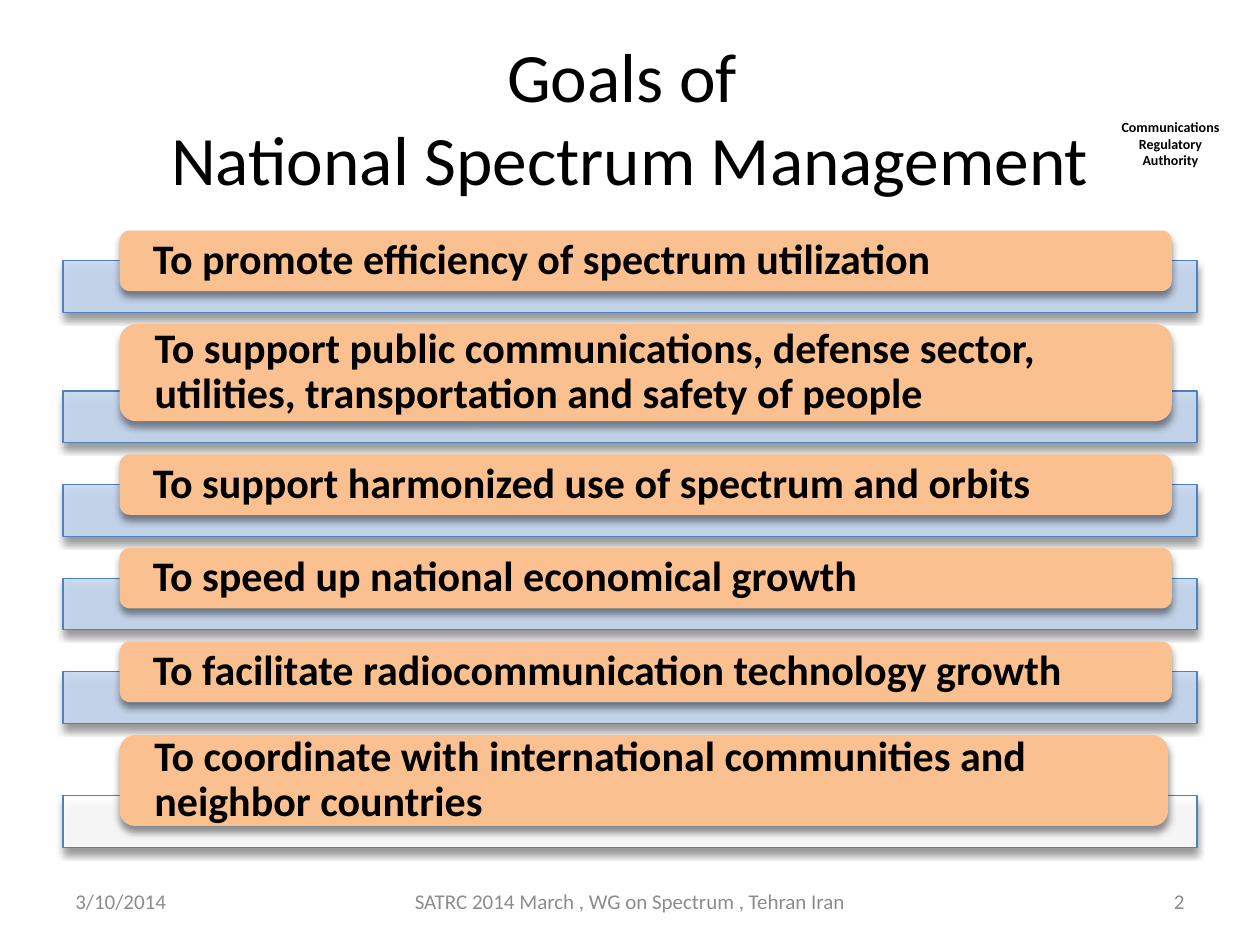
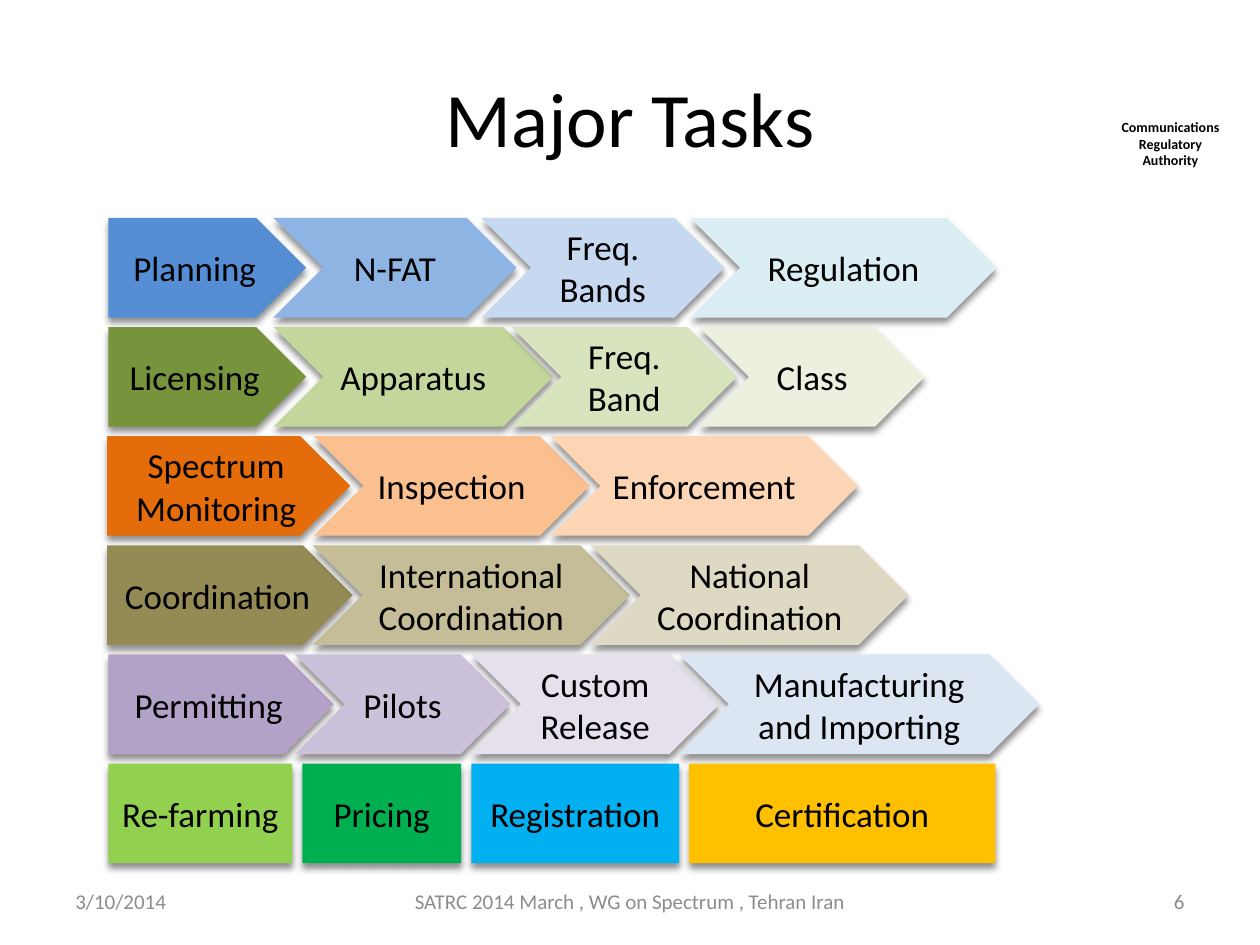
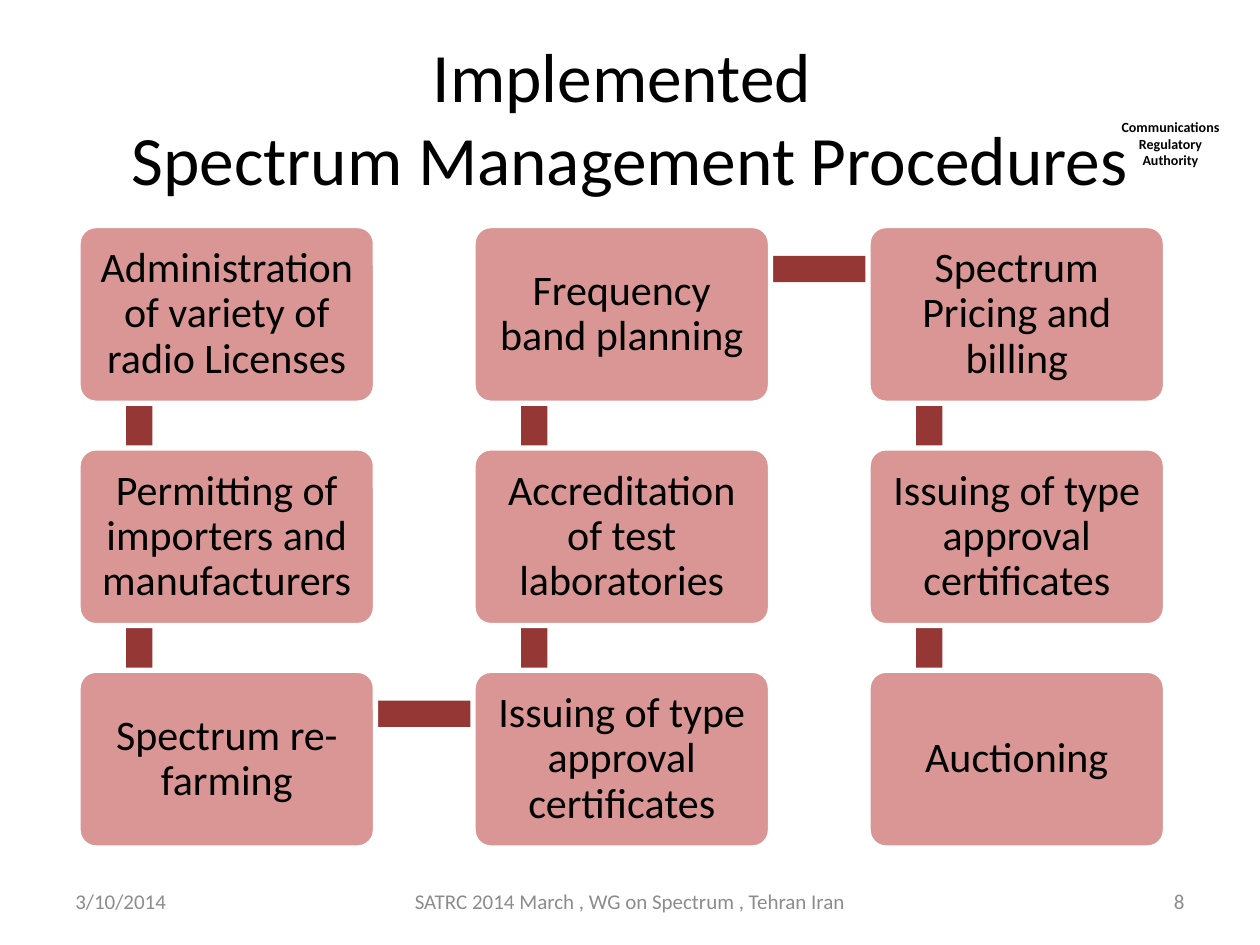
from dataclasses import dataclass

from lxml import etree
from pptx import Presentation
from pptx import util as u
from pptx.dml.color import RGBColor
from pptx.enum import shapes, text
from pptx.oxml.ns import qn

KIND = shapes.MSO_SHAPE
ALIGN = text.PP_ALIGN
MID, TOP = text.MSO_ANCHOR.MIDDLE, text.MSO_ANCHOR.TOP
CELL = u.Inches(0.1)  # the slide is a grid of 100 columns by 75 rows


@dataclass(frozen=True)
class Theme:
    ink: str = "000000"
    paper: str = "FFFFFF"
    muted: str = "8C8C8C"
    bar: str = "C6D9F1"
    edge: str = "4F81BD"
    tab: str = "FAC090"
    card: str = "D99694"
    link: str = "953735"
    font: str = "Calibri"
    title: float = 44
    pair: float = 39.6  # title on two lines
    body: float = 24
    task: float = 20
    foot: float = 12
    mark: float = 8


T = Theme()


@dataclass(frozen=True)
class Box:
    """A region in grid cells."""
    x: float
    y: float
    w: float
    h: float

    def sub(self, x, y, w, h):
        return Box(self.x + x, self.y + y, w, h)

    def emu(self):
        return [round(v * CELL) for v in (self.x, self.y, self.w, self.h)]


PAGE = Box(0, 0, 100, 75)


def rgb(code):
    return RGBColor.from_string(code)


def write(shape, words, size, color=T.ink, bold=False, align=ALIGN.CENTER,
          anchor=MID, pad=(1, 0.5), space=1.0):
    frame = shape.text_frame
    side, edge = (round(v * CELL) for v in pad)
    look = dict(word_wrap=True, vertical_anchor=anchor, margin_left=side,
                margin_right=side, margin_top=edge, margin_bottom=edge)
    for key, val in look.items():
        setattr(frame, key, val)
    frame.text = words
    para = frame.paragraphs[0]
    para.alignment, para.line_spacing = align, space
    for run in para.runs:
        face = dict(name=T.font, size=u.Pt(size), bold=bold)
        for key, val in face.items():
            setattr(run.font, key, val)
        run.font.color.rgb = rgb(color)


def label(slide, box, words, size, **form):
    write(slide.shapes.add_textbox(*box.emu()), words, size, **form)


def shade(shape):
    """Give the shape a soft shadow straight below."""
    glow = shape._element.spPr.find(qn("a:effectLst"))
    drop = etree.SubElement(glow, qn("a:outerShdw"), blurRad=str(u.Pt(4)),
                            dist=str(u.Pt(3)), dir="5400000",
                            algn="t", rotWithShape="0")
    tint = etree.SubElement(drop, qn("a:srgbClr"), val="000000")
    etree.SubElement(tint, qn("a:alpha"), val="43000")


def block(slide, kind, box, fill, line=None, width=0.75, shadow=False,
          bend=None, alpha=None):
    shape = slide.shapes.add_shape(kind, *box.emu())
    shape.shadow.inherit = False
    shape.fill.solid()
    shape.fill.fore_color.rgb = rgb(fill)
    if alpha:
        tint = shape._element.spPr.find(qn("a:solidFill"))[0]
        etree.SubElement(tint, qn("a:alpha"), val=str(alpha * 1000))
    if line:
        shape.line.color.rgb = rgb(line)
        shape.line.width = u.Pt(width)
    else:
        shape.line.fill.background()
    if shadow:
        shade(shape)
    if bend is not None:
        shape.adjustments[0] = bend
    return shape


def frame(deck, title, size, page):
    """Add a slide with the title, agency name and footer."""
    slide = deck.slides.add_slide(deck.slide_layouts[6])
    label(slide, PAGE.sub(87.8, 8.9, 10.2, 5),
          "Communications Regulatory Authority", T.mark, bold=True, anchor=TOP)
    label(slide, PAGE.sub(5, 3, 90, 12.5), title, size)
    for x, w, words, align in (
            (5, 23.3, "3/10/2014", ALIGN.LEFT),
            (31.1, 37.8, "SATRC 2014 March , WG on Spectrum , Tehran Iran",
             ALIGN.CENTER),
            (71.7, 23.3, page, ALIGN.RIGHT)):
        label(slide, PAGE.sub(x, 69.5, w, 4), words, T.foot,
              color=T.muted, align=align)
    return slide


GOALS = (  # tab height, tab width, bar colour, words
    (4.8, 83.5, T.bar, "To promote efficiency of spectrum utilization"),
    (7.7, 83.5, T.bar, "To support public communications, defense sector, "
                       "utilities, transportation and safety of people"),
    (4.8, 83.5, T.bar, "To support harmonized use of spectrum and orbits"),
    (4.8, 83.5, T.bar, "To speed up national economical growth"),
    (4.8, 83.5, T.bar, "To facilitate radiocommunication technology growth"),
    (7.2, 83.2, T.paper, "To coordinate with international communities and "
                         "neighbor countries"),
)


def goals(slide, box):
    """Stack tabs, each over the upper part of its bar."""
    top, bar, over, gap = 0, 4.1, 2.4, 0.93
    for high, wide, fill, words in GOALS:
        base = top + high - over
        block(slide, KIND.RECTANGLE, box.sub(0, base, box.w, bar), fill,
              line=T.edge, shadow=True, alpha=90)
        tab = block(slide, KIND.ROUNDED_RECTANGLE,
                    box.sub(4.5, top, wide, high), T.tab, shadow=True)
        write(tab, words, T.body, bold=True, align=ALIGN.LEFT,
              pad=(2.4, 0), space=0.9)
        top = base + bar + gap


TASKS = (  # each piece: overlap with the one before, width, colour, words
    ((0, 15.7, "558ED5", "Planning"), (2.6, 19.3, "8EB4E3", "N-FAT"),
     (2.8, 19.3, "C6D9F1", "Freq. Bands"), (2.7, 24.3, "DBEEF4", "Regulation")),
    ((0, 15.7, "77933C", "Licensing"), (2.6, 22.2, "C3D69B", "Apparatus"),
     (3.3, 17.9, "D7E4BD", "Freq. Band"), (3, 17.9, "EBF1DE", "Class")),
    ((0.1, 19.3, "E46C0A", "Spectrum Monitoring"),
     (2.9, 21.9, "FAC090", "Inspection"), (3.1, 24.4, "FCD5B5", "Enforcement")),
    ((0.1, 19.5, "948A54", "Coordination"),
     (3.2, 25.2, "C4BD97", "International Coordination"),
     (3.1, 25.2, "DDD9C3", "National Coordination")),
    ((0, 17.9, "B3A2C7", "Permitting"), (3.1, 17.1, "CCC1DA", "Pilots"),
     (3.1, 19.7, "E6E0EC", "Custom Release"),
     (3.2, 28.6, "DCE6F2", "Manufacturing and Importing")),
    ((0, 14.6, "92D050", "Re-farming"), (-0.8, 12.6, "00B050", "Pricing"),
     (-0.8, 16.5, "00B0F0", "Registration"),
     (-0.8, 24.3, "FFC000", "Certification")),
)


def tasks(slide, box):
    """Lay one chain of arrows in each row; the last row is square-ended."""
    high = 7.9
    step = (box.h - high) / (len(TASKS) - 1)
    for row, chain in enumerate(TASKS):
        left = 0
        bend = 0 if row == len(TASKS) - 1 else None
        for col, (lap, wide, fill, words) in enumerate(chain):
            left -= lap
            kind = KIND.CHEVRON if col else KIND.PENTAGON
            piece = block(slide, kind, box.sub(left, row * step, wide, high),
                          fill, shadow=True, bend=bend)
            write(piece, words, T.task)
            left += wide


STEPS = (  # one column each, top to bottom
    ("Administration of variety of radio Licenses",
     "Permitting of importers and manufacturers", "Spectrum re-farming"),
    ("Frequency band planning", "Accreditation of test laboratories",
     "Issuing of type approval certificates"),
    ("Spectrum Pricing and billing", "Issuing of type approval certificates",
     "Auctioning"),
)


def steps(slide, box):
    """Join cards in a path that runs down, up and down the columns."""
    wide, high, thick = 23.6, 14.1, 2.1
    across, down = (box.w - wide) / 2, (box.h - high) / 2
    links = [(col, row, 3.8, 3.45, thick, down)
             for col in range(3) for row in range(2)]
    links += [(col, row, 4.8, 2.4, across, thick)
              for col, row in ((0, 2), (1, 0))]
    for col, row, x, y, w, h in links:
        block(slide, KIND.RECTANGLE,
              box.sub(col * across + x, row * down + y, w, h), T.link)
    for col, names in enumerate(STEPS):
        for row, words in enumerate(names):
            card = block(slide, KIND.ROUNDED_RECTANGLE,
                         box.sub(col * across, row * down, wide, high),
                         T.card, line=T.paper, width=3, bend=0.1)
            write(card, words, T.body, pad=(1, 1), space=0.9)


def main():
    deck = Presentation()
    deck.slide_width, deck.slide_height = PAGE.emu()[2:]
    goals(frame(deck, "Goals of \vNational Spectrum Management", T.pair, "2"),
          PAGE.sub(5, 18.3, 90, 49))
    tasks(frame(deck, "Major Tasks", T.title, "6"),
          PAGE.sub(8.6, 17.3, 74, 51.2))
    steps(frame(deck, "Implemented \vSpectrum Management Procedures",
                T.pair, "8"),
          PAGE.sub(6.2, 17.9, 86.3, 49.4))
    deck.save("out.pptx")


if __name__ == "__main__":
    main()
